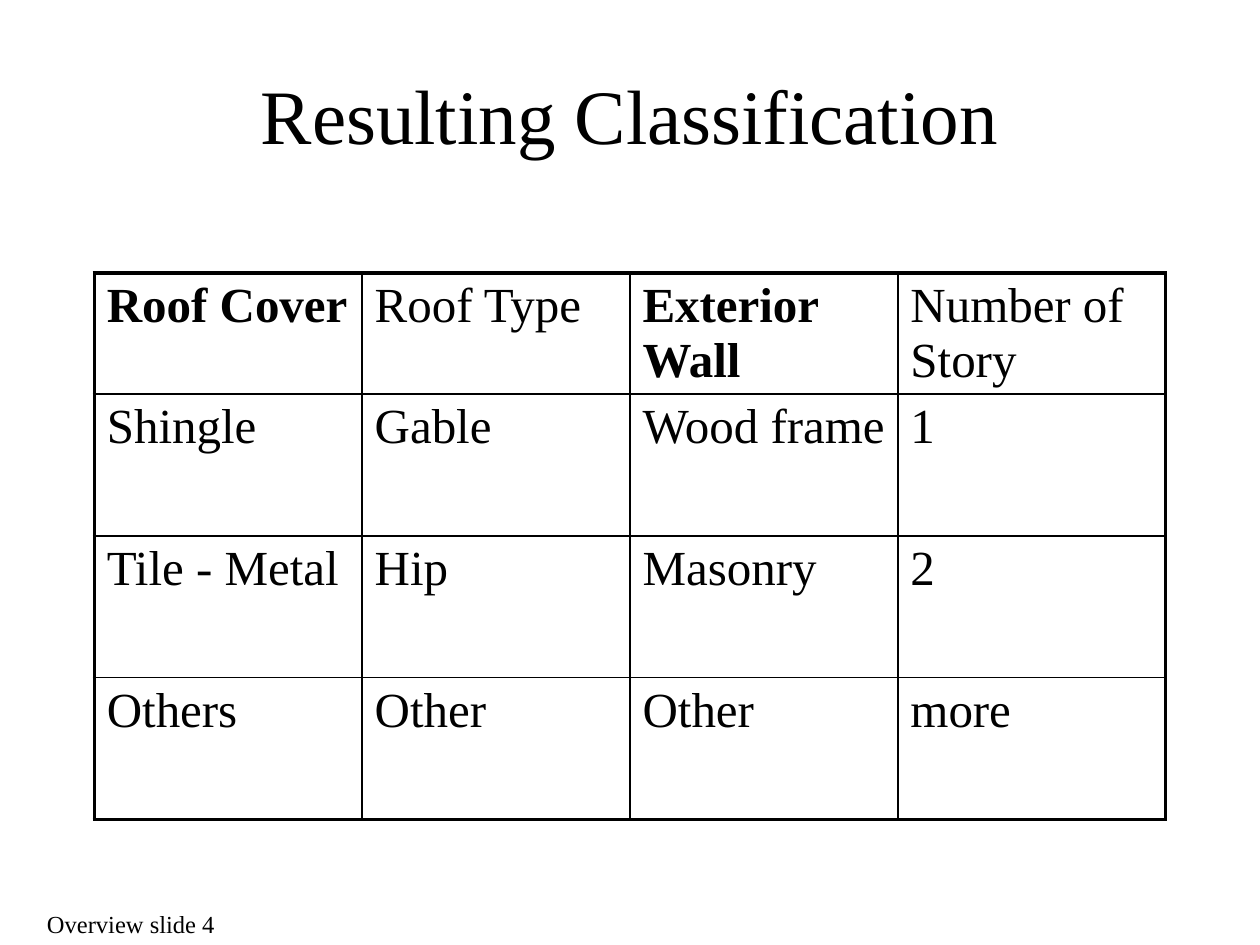
from lxml.etree import SubElement
from pptx import Presentation
from pptx.dml.color import RGBColor
from pptx.enum.text import MSO_ANCHOR, PP_ALIGN
from pptx.oxml.ns import qn
from pptx.util import Cm, Pt

TITLE = "Resulting Classification"
FOOTER = "Overview slide 4"
ROWS = [
    ("Roof Cover", "Roof Type", "Exterior Wall", "Number of Story"),
    ("Shingle", "Gable", "Wood frame", "1"),
    ("Tile - Metal", "Hip", "Masonry", "2"),
    ("Others", "Other", "Other", "more"),
]
BOLD_HEADINGS = {"Roof Cover", "Exterior Wall"}

BLACK = RGBColor(0x00, 0x00, 0x00)
FONT = "Times New Roman"
TITLE_FORMAT = {"name": FONT, "size": Pt(44), "bold": False}
CELL_FORMAT = {"name": FONT, "size": Pt(28)}
FOOTER_FORMAT = {"name": FONT, "size": Pt(14), "bold": False}

COLUMN_WIDTH = Cm(5.4)
HEADING_HEIGHT = Cm(2.34)
ROW_HEIGHT = Cm(2.86)
INNER_LINE, OUTER_LINE = Pt(1), Pt(2.25)


def format_font(font, values):
    for name, value in values.items():
        setattr(font, name, value)
    font.color.rgb = BLACK


def write_centred(shape, text, values, anchor):
    frame = shape.text_frame
    frame.word_wrap = True
    frame.vertical_anchor = anchor
    paragraph = frame.paragraphs[0]
    paragraph.alignment = PP_ALIGN.CENTER
    run = paragraph.add_run()
    run.text = text
    format_font(run.font, values)


def add_border(cell, side, width):
    line = SubElement(cell._tc.get_or_add_tcPr(), qn(f"a:ln{side}"), w=str(width))
    fill = SubElement(line, qn("a:solidFill"))
    SubElement(fill, qn("a:srgbClr"), val=str(BLACK))


def fill_cell(cell, text, outer_sides):
    for side in "LRTB":
        add_border(cell, side, OUTER_LINE if side in outer_sides else INNER_LINE)
    cell.fill.background()
    paragraph = cell.text_frame.paragraphs[0]
    space_before = SubElement(paragraph._p.get_or_add_pPr(), qn("a:spcBef"))
    SubElement(space_before, qn("a:spcPct"), val="20000")
    run = paragraph.add_run()
    run.text = text
    format_font(run.font, CELL_FORMAT | {"bold": text in BOLD_HEADINGS})


def add_classification_table(slide):
    last_row, last_column = len(ROWS) - 1, len(ROWS[0]) - 1
    table = slide.shapes.add_table(
        len(ROWS), len(ROWS[0]), Cm(1.9), Cm(5.5),
        COLUMN_WIDTH * len(ROWS[0]), HEADING_HEIGHT + ROW_HEIGHT * last_row,
    ).table
    table.first_row = table.horz_banding = False
    for column in table.columns:
        column.width = COLUMN_WIDTH
    for row_index, texts in enumerate(ROWS):
        table.rows[row_index].height = ROW_HEIGHT if row_index else HEADING_HEIGHT
        for column_index, text in enumerate(texts):
            edges = {
                "L": column_index == 0, "R": column_index == last_column,
                "T": row_index == 0, "B": row_index == last_row,
            }
            outer_sides = [side for side, is_outer in edges.items() if is_outer]
            fill_cell(table.cell(row_index, column_index), text, outer_sides)


def main():
    presentation = Presentation()
    presentation.slide_width, presentation.slide_height = Cm(25.4), Cm(19.05)
    slide = presentation.slides.add_slide(presentation.slide_layouts[5])

    title = slide.shapes.title
    title.left, title.top, title.width, title.height = Cm(1.9), Cm(0.71), Cm(21.6), Cm(3.18)
    write_centred(title, TITLE, TITLE_FORMAT, MSO_ANCHOR.MIDDLE)

    add_classification_table(slide)

    footer = slide.shapes.add_textbox(Cm(0), Cm(17.78), Cm(5.28), Cm(1.27))
    write_centred(footer, FOOTER, FOOTER_FORMAT, MSO_ANCHOR.BOTTOM)
    presentation.save("out.pptx")


if __name__ == "__main__":
    main()
